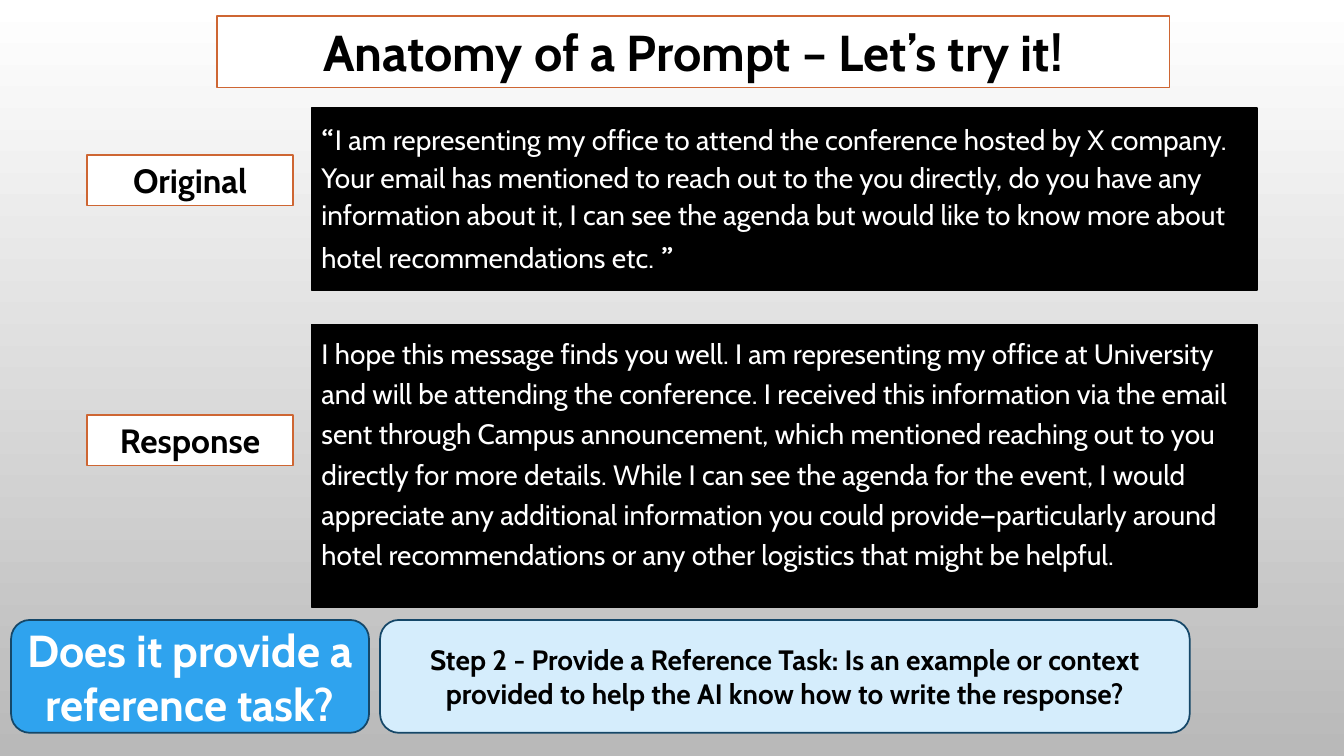
from pptx import Presentation
from pptx.dml.color import RGBColor
from pptx.enum.shapes import MSO_SHAPE as SHAPE
from pptx.enum.text import MSO_ANCHOR as ANCHOR, MSO_AUTO_SIZE as AUTO, PP_ALIGN as ALIGN
from pptx.util import Inches, Pt

TITLE = "Anatomy of a Prompt – Let’s try it!"
ORIGINAL = (
    "I am representing my office to attend the conference hosted by X company. "
    "Your email has mentioned to reach out to the you directly, do you have any "
    "information about it, I can see the agenda but would like to know more about "
    "hotel recommendations etc. "
)
RESPONSE = (
    "I hope this message finds you well. I am representing my office at University "
    "and will be attending the conference. I received this information via the email "
    "sent through Campus announcement, which mentioned reaching out to you directly "
    "for more details. While I can see the agenda for the event, I would appreciate "
    "any additional information you could provide—particularly around hotel "
    "recommendations or any other logistics that might be helpful."
)
QUESTION = "Does it provide a reference task?"
STEP = ("Step 2 - Provide a Reference Task: Is an example or context provided "
        "to help the AI know how to write the response?")

# Runs are (text, font, size)
QUOTED = [("“", "Karla", 24), (ORIGINAL, "Cabin", 20), ("”", "Karla", 24)]
ANSWER = [(RESPONSE, "Cabin", 20)]

LABEL_X, LABEL_W, LABEL_H = 0.86, 2.05, 0.5
PANEL_X, PANEL_W = 3.09, 9.38
FOOT_Y, FOOT_H = 6.15, 1.12

# Label, label top, panel top, panel height, line spacing, runs
ROWS = [
    ("Original", 1.54, 1.07, 1.81, 1.1, QUOTED),
    ("Response", 4.12, 3.22, 2.8, 1.2, ANSWER),
]
# Left, width, fill, text colour, size, text
FOOTERS = [
    (0.11, 3.55, "2FA3EE", "FFFFFF", 32, QUESTION),
    (3.77, 8.03, "D5EDFC", "000000", 20, STEP),
]


def rgb(value):
    return RGBColor.from_string(value)


def style(s, fill, line, runs, color, bold=True, align=ALIGN.CENTER,
          anchor=ANCHOR.TOP, spacing=1.0):
    """Fill and outline a shape, then write its runs as one paragraph."""
    s.fill.solid()
    s.fill.fore_color.rgb = rgb(fill)
    s.line.color.rgb = rgb(line)
    s.line.width = Pt(1.25)
    tf = s.text_frame
    tf.word_wrap = True
    tf.auto_size = AUTO.NONE
    tf.vertical_anchor = anchor
    p = tf.paragraphs[0]
    p.alignment = align
    p.line_spacing = spacing
    p.space_before = Pt(0)
    for text, font, size in runs:
        r = p.add_run()
        r.text = text
        r.font.name = font
        r.font.size = Pt(size)
        r.font.bold = bold
        r.font.color.rgb = rgb(color)


def add_box(slide, kind, *place):
    s = slide.shapes.add_shape(kind, *map(Inches, place))
    s.shadow.inherit = False
    return s


def main():
    prs = Presentation()
    prs.slide_width, prs.slide_height = Inches(13.33), Inches(7.5)
    slide = prs.slides.add_slide(prs.slide_layouts[5])

    backdrop = slide.background.fill
    backdrop.gradient()
    backdrop.gradient_angle = 270
    for stop, color, position in zip(backdrop.gradient_stops, ("FFFFFF", "B9B9B9"), (0, 1)):
        stop.color.rgb = rgb(color)
        stop.position = position

    title = slide.shapes.title
    title.left, title.top, title.width, title.height = map(Inches, (2.15, 0.16, 9.45, 0.71))
    style(title, "FFFFFF", "CE6633", [(TITLE, "Cabin", 36)], "000000")

    for label, label_y, panel_y, panel_h, spacing, runs in ROWS:
        s = add_box(slide, SHAPE.RECTANGLE, LABEL_X, label_y, LABEL_W, LABEL_H)
        style(s, "FFFFFF", "CE6633", [(label, "Cabin", 24)], "000000")
        s = add_box(slide, SHAPE.RECTANGLE, PANEL_X, panel_y, PANEL_W, panel_h)
        style(s, "000000", "000000", runs, "FFFFFF", bold=False,
              align=ALIGN.LEFT, spacing=spacing)

    for x, width, fill, color, size, text in FOOTERS:
        s = add_box(slide, SHAPE.ROUNDED_RECTANGLE, x, FOOT_Y, width, FOOT_H)
        style(s, fill, "154768", [(text, "Cabin", size)], color, anchor=ANCHOR.MIDDLE)

    prs.save("out.pptx")


if __name__ == "__main__":
    main()
